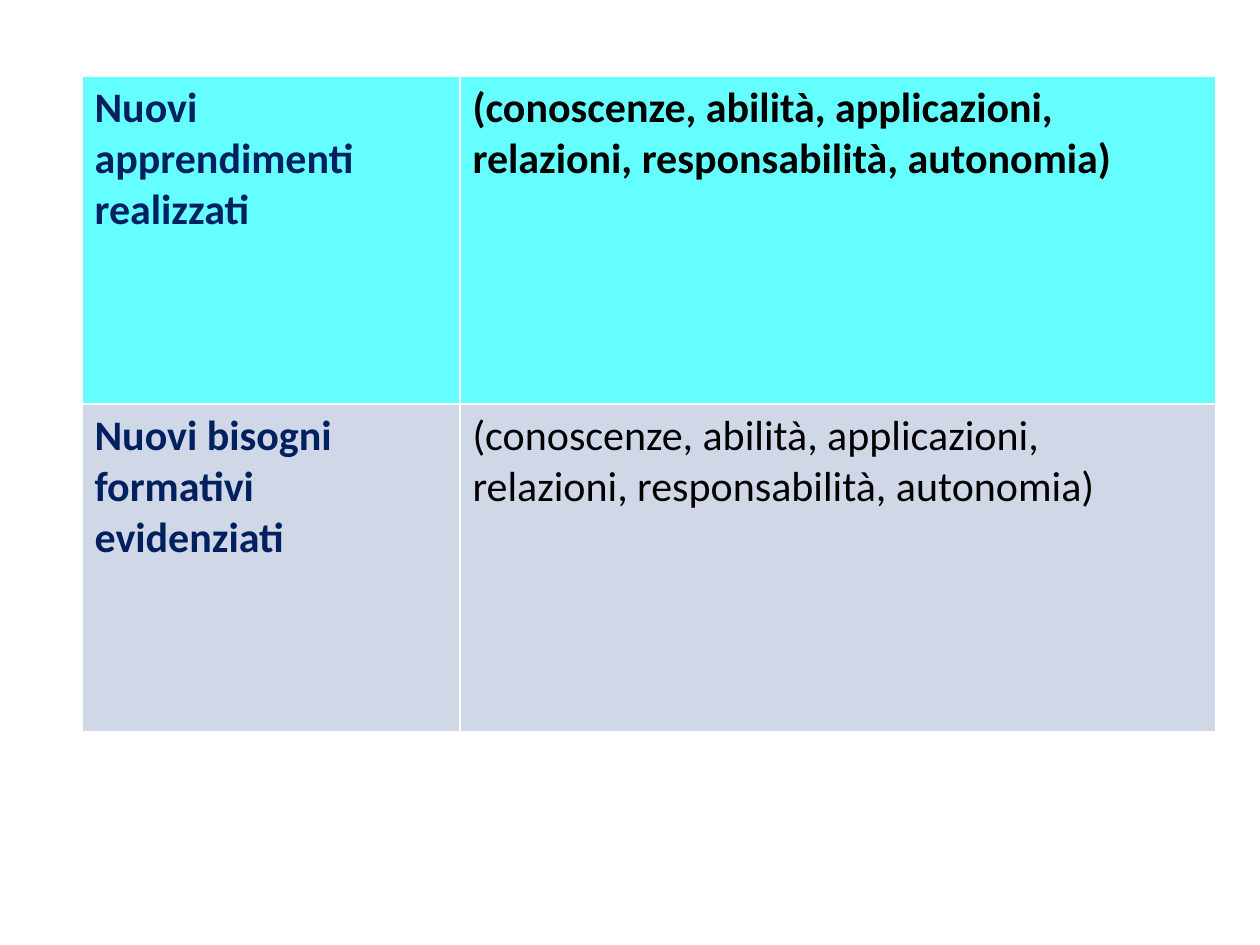
from pptx import Presentation
from pptx.dml.color import RGBColor
from pptx.util import Emu, Pt

SCALE = 914400 // 126  # EMU per px

COLORS = {
    "navy": "002060",
    "black": "000000",
    "cyan": "66FFFF",
    "grey": "D0D8E8",
}

# Content: one (label, detail, fill, detail is bold) per row
DETAIL = "(conoscenze, abilità, applicazioni, relazioni, responsabilità, autonomia)"
ROWS = [
    ("Nuovi apprendimenti realizzati", DETAIL, "cyan", True),
    ("Nuovi bisogni formativi evidenziati", DETAIL, "grey", False),
]
COLUMN_WIDTHS = [378, 756]
ROW_HEIGHT = 328
LEFT, TOP = 82, 76


def px(length):
    return Emu(length * SCALE)


def color(name):
    return RGBColor.from_string(COLORS[name])


def fill_cell(cell, text, fill, ink, bold):
    cell.fill.solid()
    cell.fill.fore_color.rgb = color(fill)
    cell.text_frame.text = text
    font = cell.text_frame.paragraphs[0].runs[0].font
    font.name = "Calibri"
    font.size = Pt(24)
    font.bold = bold
    font.color.rgb = color(ink)


deck = Presentation()
deck.slide_width, deck.slide_height = px(1260), px(945)
page = deck.slides.add_slide(deck.slide_layouts[6])

# Table: the default style supplies the white cell borders
table = page.shapes.add_table(
    len(ROWS), len(COLUMN_WIDTHS), px(LEFT), px(TOP),
    px(sum(COLUMN_WIDTHS)), px(ROW_HEIGHT * len(ROWS)),
).table
for column, width in zip(table.columns, COLUMN_WIDTHS):
    column.width = px(width)

for index, (label, detail, fill, detail_bold) in enumerate(ROWS):
    table.rows[index].height = px(ROW_HEIGHT)
    fill_cell(table.cell(index, 0), label, fill, "navy", True)
    fill_cell(table.cell(index, 1), detail, fill, "black", detail_bold)

deck.save("out.pptx")
